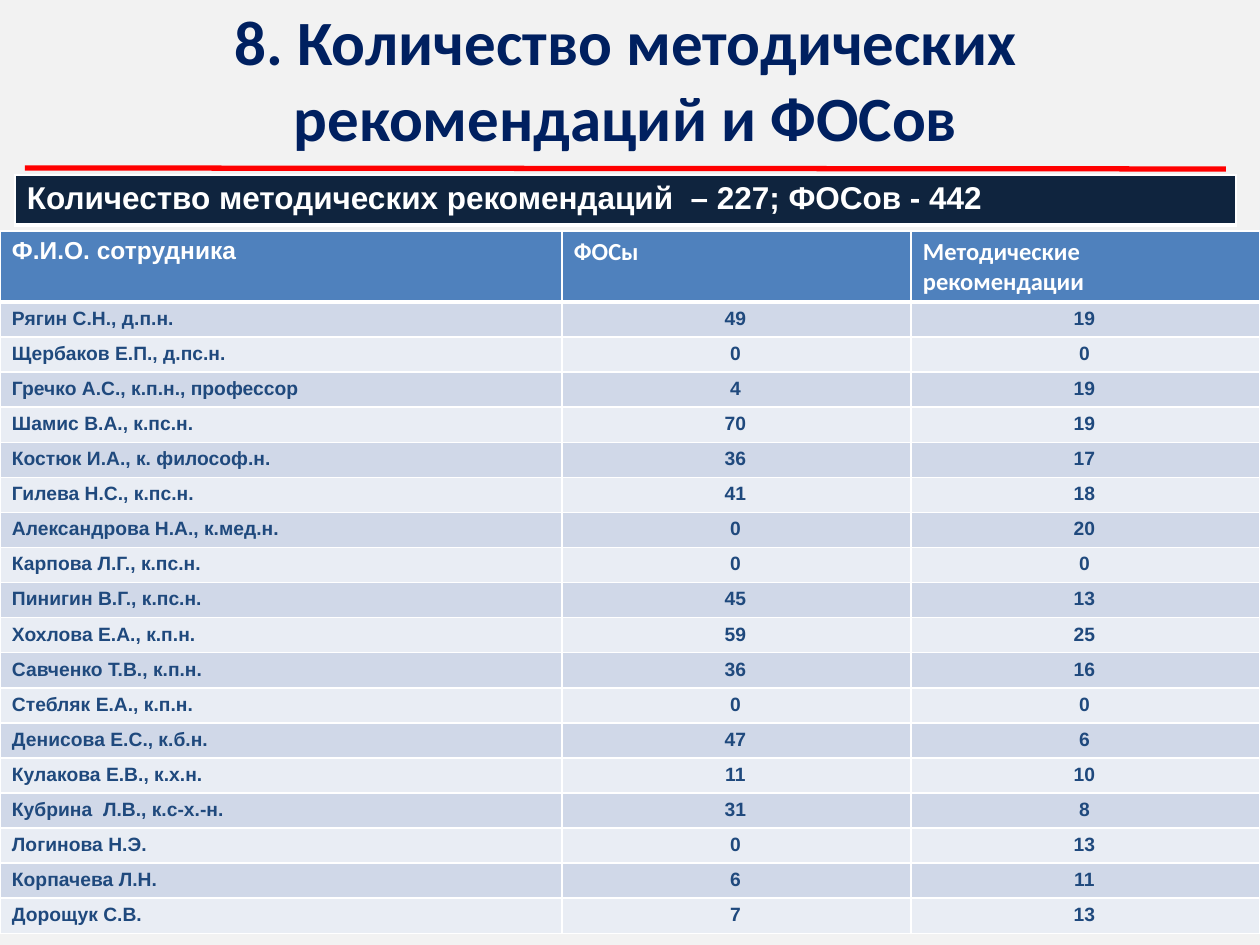
from lxml.etree import SubElement
from pptx import Presentation
from pptx.dml.color import RGBColor
from pptx.enum.shapes import MSO_CONNECTOR
from pptx.enum.text import MSO_ANCHOR, PP_ALIGN
from pptx.oxml.ns import qn
from pptx.util import Pt

EMU_PER_PX = 914400 / 126
SLIDE_WIDTH, SLIDE_HEIGHT = 1260, 945

BACKGROUND = RGBColor(0xF2, 0xF2, 0xF2)
NAVY = RGBColor(0x00, 0x20, 0x60)
RED = RGBColor(0xFF, 0x00, 0x00)
WHITE = RGBColor(0xFF, 0xFF, 0xFF)
BANNER = RGBColor(0x0F, 0x24, 0x3E)
HEADER = RGBColor(0x4F, 0x81, 0xBD)
BANDS = (RGBColor(0xD0, 0xD8, 0xE8), RGBColor(0xE9, 0xED, 0xF4))
BODY_TEXT = RGBColor(0x1F, 0x49, 0x7D)

TITLE_FORMAT = {"name": "Calibri", "size": Pt(36), "bold": True, "color": NAVY}
BANNER_FORMAT = {"name": "Arial", "size": Pt(18), "bold": True, "color": WHITE}
HEADER_FORMAT = {"name": "Arial", "size": Pt(14), "bold": True, "color": WHITE}
HEADER_VALUE_FORMAT = HEADER_FORMAT | {"name": "Calibri"}
BODY_FORMAT = {"name": "Arial", "size": Pt(11), "bold": True, "color": BODY_TEXT}

HEADINGS = ("Ф.И.О. сотрудника", "ФОСы", "Методические рекомендации")
STAFF = (
    ("Рягин С.Н., д.п.н.", 49, 19),
    ("Щербаков Е.П., д.пс.н.", 0, 0),
    ("Гречко А.С., к.п.н., профессор", 4, 19),
    ("Шамис В.А., к.пс.н.", 70, 19),
    ("Костюк И.А., к. философ.н.", 36, 17),
    ("Гилева Н.С., к.пс.н.", 41, 18),
    ("Александрова Н.А., к.мед.н.", 0, 20),
    ("Карпова Л.Г., к.пс.н.", 0, 0),
    ("Пинигин В.Г., к.пс.н.", 45, 13),
    ("Хохлова Е.А., к.п.н.", 59, 25),
    ("Савченко Т.В., к.п.н.", 36, 16),
    ("Стебляк Е.А., к.п.н.", 0, 0),
    ("Денисова Е.С., к.б.н.", 47, 6),
    ("Кулакова Е.В., к.х.н.", 11, 10),
    ("Кубрина  Л.В., к.с-х.-н.", 31, 8),
    ("Логинова Н.Э.", 0, 13),
    ("Корпачева Л.Н.", 6, 11),
    ("Дорощук С.В.", 7, 13),
)


def px(length):
    return round(length * EMU_PER_PX)


class SlideBuilder:
    def __init__(self, presentation):
        self.slide = presentation.slides.add_slide(presentation.slide_layouts[6])
        self.slide.background.fill.solid()
        self.slide.background.fill.fore_color.rgb = BACKGROUND

    def fill_text(self, text_frame, text, text_format, align):
        paragraph = text_frame.paragraphs[0]
        paragraph.alignment = align
        run = paragraph.add_run()
        run.text = text
        for attribute, value in text_format.items():
            if attribute == "color":
                run.font.color.rgb = value
            else:
                setattr(run.font, attribute, value)

    def text(self, left, top, width, height, text, text_format):
        shape = self.slide.shapes.add_textbox(px(left), px(top), px(width), px(height))
        shape.text_frame.word_wrap = True
        shape.text_frame.vertical_anchor = MSO_ANCHOR.MIDDLE
        self.fill_text(shape.text_frame, text, text_format, PP_ALIGN.CENTER)

    def line(self, start, end, color, width):
        connector = self.slide.shapes.add_connector(
            MSO_CONNECTOR.STRAIGHT, *map(px, start + end))
        connector.line.color.rgb = color
        connector.line.width = Pt(width)
        SubElement(connector._element.spPr, qn("a:effectLst"))

    def table(self, left, top, column_widths, row_heights):
        frame = self.slide.shapes.add_table(
            len(row_heights), len(column_widths), px(left), px(top),
            px(sum(column_widths)), px(sum(row_heights)))
        table = frame.table
        table.first_row = table.horz_banding = False
        for column, width in zip(table.columns, column_widths):
            column.width = px(width)
        for row, height in zip(table.rows, row_heights):
            row.height = px(height)
        return table

    def cell(self, cell, text, text_format, fill, align=PP_ALIGN.LEFT, bottom=1):
        margins = {"margin_left": 12, "margin_right": 14,
                   "margin_top": 6, "margin_bottom": 6}
        for attribute, value in margins.items():
            setattr(cell, attribute, px(value))
        self.borders(cell, {"L": 1, "R": 1, "T": 1, "B": bottom})
        cell.fill.solid()
        cell.fill.fore_color.rgb = fill
        self.fill_text(cell.text_frame, text, text_format, align)

    def borders(self, cell, widths):
        properties = cell._tc.get_or_add_tcPr()
        for side, width in widths.items():
            border = SubElement(properties, qn(f"a:ln{side}"), w=str(Pt(width)))
            solid = SubElement(border, qn("a:solidFill"))
            SubElement(solid, qn("a:srgbClr"), val=str(WHITE))


def main():
    presentation = Presentation()
    presentation.slide_width = px(SLIDE_WIDTH)
    presentation.slide_height = px(SLIDE_HEIGHT)
    builder = SlideBuilder(presentation)

    # Title and rule
    builder.text(30, 0, 1191, 157,
                 "8. Количество методических рекомендаций и ФОСов", TITLE_FORMAT)
    builder.line((25, 168), (1226, 169), RED, 3)

    # Totals banner
    banner = builder.table(15, 175, [1221], [50])
    builder.cell(banner.cell(0, 0),
                 "Количество методических рекомендаций  – 227; ФОСов - 442",
                 BANNER_FORMAT, BANNER, bottom=3)

    # Staff table: header, then banded rows
    staff_table = builder.table(0, 231, [562, 349, 349], [71] + [34] * len(STAFF))
    for column, heading in enumerate(HEADINGS):
        text_format = HEADER_VALUE_FORMAT if column else HEADER_FORMAT
        builder.cell(staff_table.cell(0, column), heading, text_format, HEADER, bottom=3)
    for row, record in enumerate(STAFF, start=1):
        for column, value in enumerate(record):
            align = PP_ALIGN.CENTER if column else PP_ALIGN.LEFT
            builder.cell(staff_table.cell(row, column), str(value), BODY_FORMAT,
                         BANDS[(row - 1) % 2], align)

    presentation.save("out.pptx")


if __name__ == "__main__":
    main()
